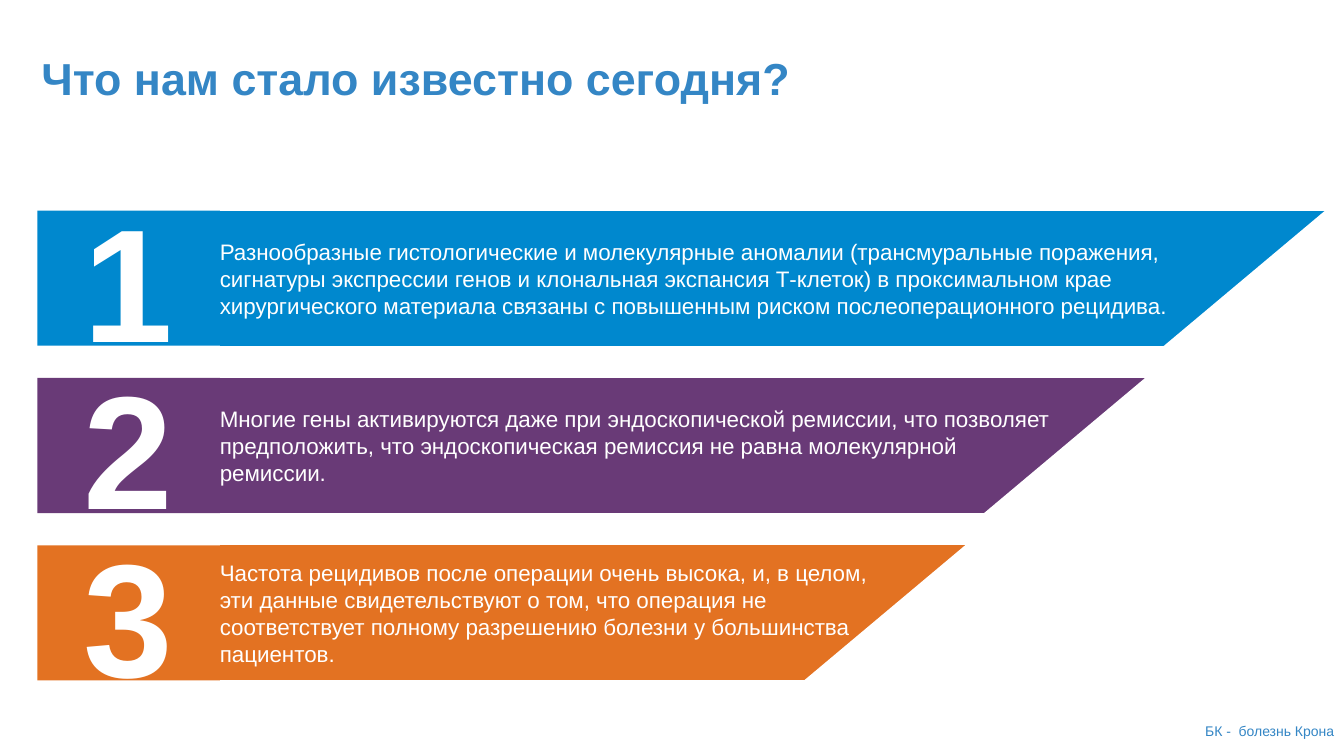
from lxml.etree import SubElement
from pptx import Presentation
from pptx.dml.color import RGBColor
from pptx.enum.shapes import MSO_SHAPE
from pptx.enum.text import MSO_ANCHOR, PP_ALIGN
from pptx.oxml.ns import qn
from pptx.util import Emu, Pt

BLUE = "3486C5"
WHITE = "FFFFFF"
WIDE, TALL = 1333, 750
LEFT, TOP, STEP = 37, 209, 166
BADGE, HIGH = 181, 134
BANDS = [
    ("0088CE", 86, 118,
     "Разнообразные гистологические и молекулярные аномалии (трансмуральные поражения, "
     "сигнатуры экспрессии генов и клональная экспансия Т-клеток) в проксимальном крае "
     "хирургического материала связаны с повышенным риском послеоперационного рецидива."),
    ("693A77", 72, 276,
     "Многие гены активируются даже при эндоскопической ремиссии, что позволяет "
     "предположить, что эндоскопическая ремиссия не равна молекулярной ремиссии."),
    ("E37222", 58, 472,
     "Частота рецидивов после операции очень высока, и, в целом, эти данные "
     "свидетельствуют о том, что операция не соответствует полному разрешению "
     "болезни у большинства пациентов."),
]


def px(num):
    """Turn px, a hundred to the inch, into EMU."""
    return Emu(num * 9144)


def tint(code):
    """Turn a hex string into a colour."""
    return RGBColor.from_string(code)


class Deck:
    """Hold the style and the current slide."""

    font = "Arial"

    def __init__(self):
        """Open a blank deck with one titled slide."""
        self.show = Presentation()
        self.show.slide_width = px(WIDE)
        self.show.slide_height = px(TALL)
        self.slide = self.show.slides.add_slide(self.show.slide_layouts[5])

    def label(self, shape, text, size, color, bold=False, align=PP_ALIGN.LEFT):
        """Put formatted text into a shape."""
        frame = shape.text_frame
        frame.text = text
        frame.word_wrap = True
        frame.vertical_anchor = MSO_ANCHOR.MIDDLE
        para = frame.paragraphs[0]
        para.alignment = align
        font = para.runs[0].font
        font.name = self.font
        font.size = Pt(size)
        font.bold = bold
        font.color.rgb = tint(color)
        return para

    def title(self, text, x, y, w, h):
        """Place and fill the title."""
        head = self.slide.shapes.title
        head.left, head.top, head.width, head.height = map(px, (x, y, w, h))
        self.label(head, text, 32, BLUE, True).line_spacing = 0.9

    def note(self, text, x, y, w, h):
        """Add a small right-aligned note."""
        box = self.slide.shapes.add_textbox(*map(px, (x, y, w, h)))
        self.label(box, text, 10, BLUE, align=PP_ALIGN.RIGHT)

    def rect(self, group, x, y, w, h):
        """Add a plain rectangle without a line to a group."""
        shape = group.shapes.add_shape(MSO_SHAPE.RECTANGLE, *map(px, (x, y, w, h)))
        shape.shadow.inherit = False
        shape.line.fill.background()
        return shape

    def slant(self, shape, color, cut):
        """Fill a shape with colour up to a slanted cut, then white."""
        shape.fill.gradient()
        shape.fill.gradient_angle = 310
        stops = shape._element.spPr.find(qn("a:gradFill")).find(qn("a:gsLst"))
        for old in list(stops):
            stops.remove(old)
        for spot, code in ((0, color), (cut, color), (cut, WHITE)):
            stop = SubElement(stops, qn("a:gs"), pos=str(spot * 1000))
            SubElement(stop, qn("a:srgbClr"), val=code)

    def band(self, num, y, color, cut, inset, text):
        """Add a numbered band with a slanted end."""
        group = self.slide.shapes.add_group_shape()
        start = LEFT + BADGE
        bar = self.rect(group, start, y, WIDE - start, HIGH)
        self.slant(bar, color, cut)
        bar.text_frame.margin_left = 0
        bar.text_frame.margin_right = px(inset)
        self.label(bar, text, 16, WHITE)
        badge = self.rect(group, LEFT, y, BADGE, HIGH)
        badge.fill.solid()
        badge.fill.fore_color.rgb = tint(color)
        self.label(badge, str(num), 115, WHITE, True, PP_ALIGN.CENTER)


def main():
    """Build and save the slide."""
    deck = Deck()
    deck.title("Что нам стало известно сегодня?", 31, 23, 1142, 114)
    for row, band in enumerate(BANDS):
        deck.band(row + 1, TOP + row * STEP, *band)
    deck.note("БК -  болезнь Крона", 590, 701, 743, 49)
    deck.show.save("out.pptx")


if __name__ == "__main__":
    main()
